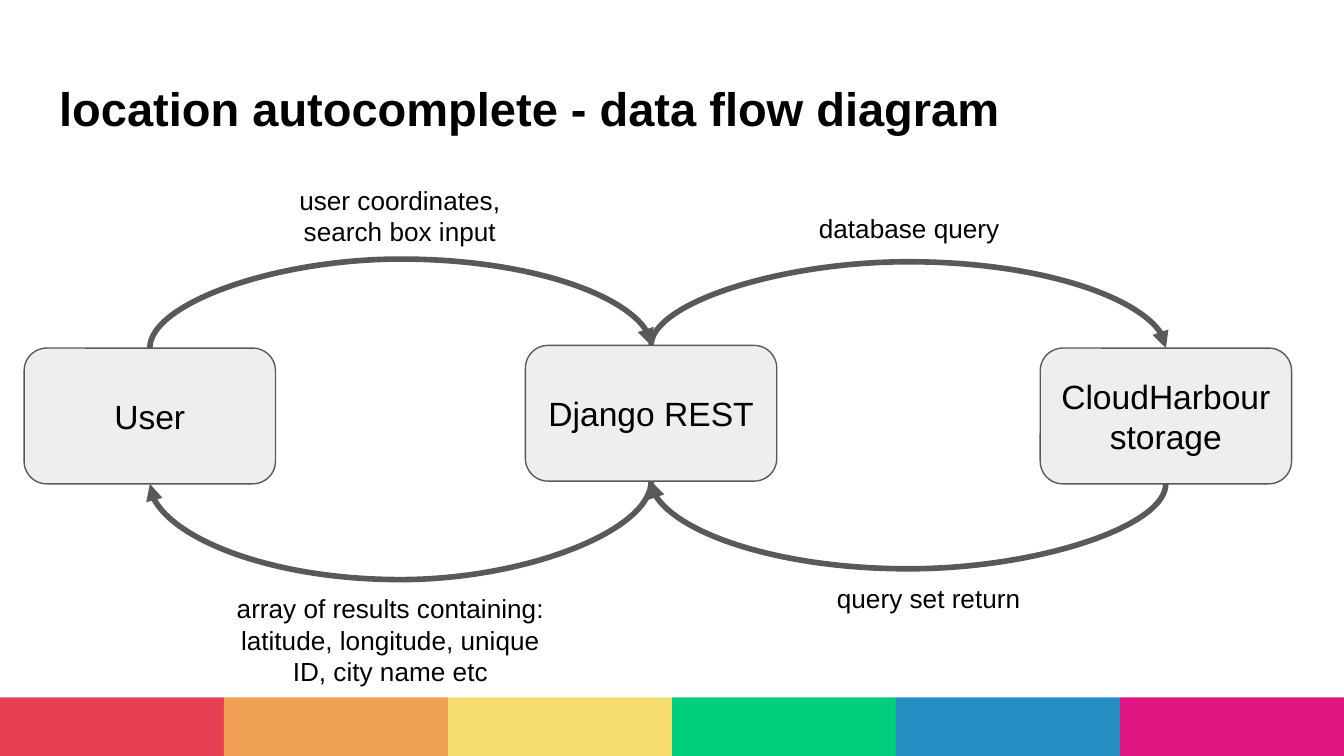
import pptx
import pptx.dml.color
import pptx.enum.shapes
import pptx.enum.text
import pptx.oxml.ns
import pptx.util
from lxml import etree
from pptx.util import Inches

RGBColor = pptx.dml.color.RGBColor
MSO_SHAPE = pptx.enum.shapes.MSO_SHAPE
PP_ALIGN = pptx.enum.text.PP_ALIGN
MSO_ANCHOR = pptx.enum.text.MSO_ANCHOR
qn = pptx.oxml.ns.qn

BLACK = RGBColor(0x00, 0x00, 0x00)
GREY = RGBColor(0x59, 0x59, 0x59)
LIGHT_GREY = RGBColor(0xEE, 0xEE, 0xEE)
STRIPE_COLORS = [
    RGBColor(0xE6, 0x3F, 0x52), RGBColor(0xF0, 0xA0, 0x55),
    RGBColor(0xF5, 0xDC, 0x6D), RGBColor(0x00, 0xCE, 0x7D),
    RGBColor(0x24, 0x8D, 0xC1), RGBColor(0xE0, 0x17, 0x83),
]
TOP, BOTTOM = 0, 2  # connection sites of a rounded rectangle
BOX_WIDTH, BOX_HEIGHT = 1.87, 1.01


def write_text(shape, lines, size, alignment, anchor, bold=False):
    frame = shape.text_frame
    frame.word_wrap = True
    frame.auto_size = pptx.enum.text.MSO_AUTO_SIZE.NONE
    frame.vertical_anchor = anchor
    frame.margin_left = frame.margin_right = Inches(0.1)
    frame.margin_top = frame.margin_bottom = Inches(0.1)
    for index, line in enumerate(lines):
        paragraph = frame.add_paragraph() if index else frame.paragraphs[0]
        paragraph.alignment = alignment
        run = paragraph.add_run()
        run.text = line
        run.font.name = "Arial"
        run.font.size = pptx.util.Pt(size)
        run.font.bold = bold
        run.font.color.rgb = BLACK


presentation = pptx.Presentation()
presentation.slide_width = Inches(10)
presentation.slide_height = Inches(5.625)
slide = presentation.slides.add_slide(presentation.slide_layouts[5])
shapes = slide.shapes

title = shapes.title
title.left, title.top = Inches(0.34), Inches(0.49)
title.width, title.height = Inches(9.32), Inches(0.63)
write_text(title, ["location autocomplete - data flow diagram"], 25.2,
           PP_ALIGN.LEFT, MSO_ANCHOR.MIDDLE, bold=True)

# Coloured stripe along the bottom
stripe_width = 10 / len(STRIPE_COLORS)
for index, color in enumerate(STRIPE_COLORS):
    stripe = shapes.add_shape(MSO_SHAPE.RECTANGLE, Inches(index * stripe_width),
                              Inches(5.19), Inches(stripe_width), Inches(0.44))
    stripe.shadow.inherit = False
    stripe.fill.solid()
    stripe.fill.fore_color.rgb = color
    stripe.line.fill.background()

# System boxes
boxes = []
for text, left, top in [("User", 0.18, 2.59), ("Django REST", 3.91, 2.57),
                        ("CloudHarbour storage", 7.74, 2.59)]:
    box = shapes.add_shape(MSO_SHAPE.ROUNDED_RECTANGLE, Inches(left), Inches(top),
                           Inches(BOX_WIDTH), Inches(BOX_HEIGHT))
    box.shadow.inherit = False
    box.fill.solid()
    box.fill.fore_color.rgb = LIGHT_GREY
    box.line.color.rgb = GREY
    box.line.width = pptx.util.Pt(0.75)
    write_text(box, [text], 18, PP_ALIGN.CENTER, MSO_ANCHOR.MIDDLE)
    boxes.append(box)
user, server, storage = boxes

# Curved arrows: start box, end box, connection site, height of the curve's peak
for start, end, site, peak in [(user, server, TOP, 1.93), (server, storage, TOP, 1.95),
                               (storage, server, BOTTOM, 4.23), (server, user, BOTTOM, 4.31)]:
    arrow = shapes.add_connector(pptx.enum.shapes.MSO_CONNECTOR.CURVE, 0, 0, 0, 0)
    arrow.begin_connect(start, site)
    arrow.end_connect(end, site)
    arrow.line.color.rgb = GREY
    arrow.line.width = pptx.util.Pt(3)
    begin_x, begin_y, end_x, end_y = arrow.begin_x, arrow.begin_y, arrow.end_x, arrow.end_y

    # The preset curve bulges sideways, so it is turned to bulge up or down
    drop, span = abs(end_y - begin_y), abs(end_x - begin_x)
    outward = -1 if site == TOP else 1
    against = (end_y - begin_y) * outward < 0
    reach = abs(Inches(peak) - begin_y) / drop * (-1 if against else 1)
    properties = arrow._element.spPr
    transform = properties.find(qn("a:xfrm"))
    transform.attrib.clear()
    transform.set("rot", str((270 if site == TOP else 90) * 60000))
    if against:
        transform.set("flipH", "1")
    arrow.left = (begin_x + end_x - drop) // 2
    arrow.top = (begin_y + end_y - span) // 2
    arrow.width, arrow.height = drop, span

    geometry = properties.find(qn("a:prstGeom"))
    guides = geometry.find(qn("a:avLst"))
    etree.SubElement(guides, qn("a:gd"), name="adj1", fmla=f"val {round(reach * 100000)}")
    etree.SubElement(properties.find(qn("a:ln")), qn("a:tailEnd"), type="triangle")
    etree.SubElement(properties, qn("a:effectLst"))

# Flow labels
for lines, left, top, width, height in [
    (["user coordinates,", "search box input"], 1.87, 1.27, 2.21, 0.88),
    (["database query"], 5.59, 1.48, 2.35, 0.44),
    (["query set return"], 5.67, 4.23, 2.48, 0.44),
    (["array of results containing:", "latitude, longitude, unique ID, city name etc"],
     1.62, 4.31, 2.57, 0.88),
]:
    label = shapes.add_textbox(Inches(left), Inches(top), Inches(width), Inches(height))
    write_text(label, lines, 14, PP_ALIGN.CENTER, MSO_ANCHOR.TOP)

presentation.save("out.pptx")
